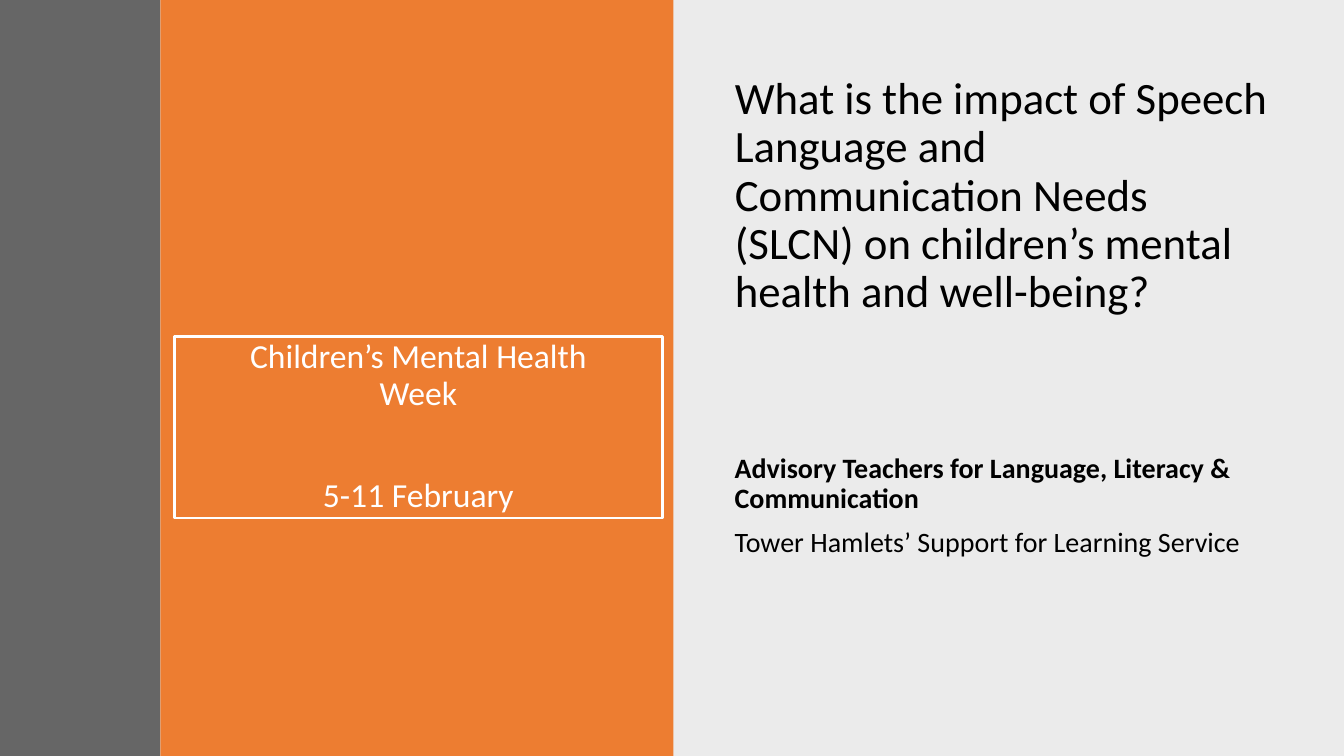
from pptx import Presentation
from pptx.dml.color import RGBColor
from pptx.enum.shapes import MSO_SHAPE as Preset
from pptx.enum.text import MSO_ANCHOR as Anchor, MSO_AUTO_SIZE as AutoSize, PP_ALIGN as Align
from pptx.oxml.ns import qn
from pptx.util import Pt
from lxml.etree import SubElement

SLIDE_WIDTH, SLIDE_HEIGHT = 960, 540
COLORS = {"black": "000000", "white": "FFFFFF", "orange": "ED7D31", "gray": "404040"}
TEXT_LEFT, TEXT_WIDTH, TEXT_HEIGHT = 517.7, 398.2, 200.9


def color(name):
    return RGBColor.from_string(COLORS[name])


def place(shape, left, top, width, height):
    box = {"left": left, "top": top, "width": width, "height": height}
    for name, value in box.items():
        setattr(shape, name, Pt(value))


def add_panel(slide, left, width, fill, opacity=100):
    """Add a full-height colour band."""
    panel = slide.shapes.add_shape(Preset.RECTANGLE, Pt(left), 0, Pt(width), Pt(SLIDE_HEIGHT))
    panel.shadow.inherit = False
    panel.line.fill.background()
    panel.fill.solid()
    panel.fill.fore_color.rgb = color(fill)
    if opacity < 100:
        rgb = panel.fill._xPr.find(qn("a:solidFill"))[0]
        SubElement(rgb, qn("a:alpha")).set("val", str(opacity * 1000))


def write_text(shape, lines, size, font_color="black", align=Align.LEFT,
               anchor=Anchor.TOP, space_before=10, margin_top=3.6):
    """Write (text, bold) lines as paragraphs without bullets."""
    frame = shape.text_frame
    frame_format = {"word_wrap": True, "auto_size": AutoSize.NONE,
                    "vertical_anchor": anchor, "margin_top": Pt(margin_top)}
    for name, value in frame_format.items():
        setattr(frame, name, value)
    paragraph_format = {"alignment": align, "line_spacing": 0.9,
                        "space_before": Pt(space_before)}
    for index, (text, bold) in enumerate(lines):
        paragraph = frame.add_paragraph() if index else frame.paragraphs[0]
        paragraph.text = text
        for name, value in paragraph_format.items():
            setattr(paragraph, name, value)
        properties = paragraph._p.get_or_add_pPr()
        properties.set("marL", "0")
        properties.set("indent", "0")
        SubElement(properties, qn("a:buNone"))
        for run in paragraph.runs:
            font_format = {"name": "Calibri", "size": Pt(size), "bold": bold}
            for name, value in font_format.items():
                setattr(run.font, name, value)
            run.font.color.rgb = color(font_color)


def main():
    presentation = Presentation()
    presentation.slide_width, presentation.slide_height = Pt(SLIDE_WIDTH), Pt(SLIDE_HEIGHT)
    slide = presentation.slides.add_slide(presentation.slide_layouts[1])
    title, question = slide.placeholders

    # Background bands
    add_panel(slide, 480, 480, "black", opacity=8)
    add_panel(slide, 114.5, 366.5, "orange")
    add_panel(slide, 0, 114.5, "gray", opacity=80)

    # Framed title
    place(title, 124.6, 240.5, 348.5, 129.6)
    title.line.color.rgb = color("white")
    title.line.width = Pt(2)
    write_text(title, [("Children’s Mental Health\vWeek\v\v5-11 February", False)], 24,
               "white", Align.CENTER, Anchor.MIDDLE, space_before=0)

    # Question
    place(question, TEXT_LEFT, 50.4, TEXT_WIDTH, TEXT_HEIGHT)
    write_text(question, [("What is the impact of Speech Language and Communication Needs "
                           "(SLCN) on children’s mental health and well-being?", False)], 32)

    # Bring the placeholders in front of the bands
    for placeholder in (title, question):
        slide.shapes._spTree.append(placeholder._element)

    # Presenters
    presenters = slide.shapes.add_textbox(0, 0, 0, 0)
    place(presenters, TEXT_LEFT, 288.7, TEXT_WIDTH, TEXT_HEIGHT)
    write_text(presenters, [("Advisory Teachers for Language, Literacy & Communication", True),
                            ("Tower Hamlets’ Support for Learning Service", False)],
               20, margin_top=35.6)

    presentation.save("out.pptx")


if __name__ == "__main__":
    main()
